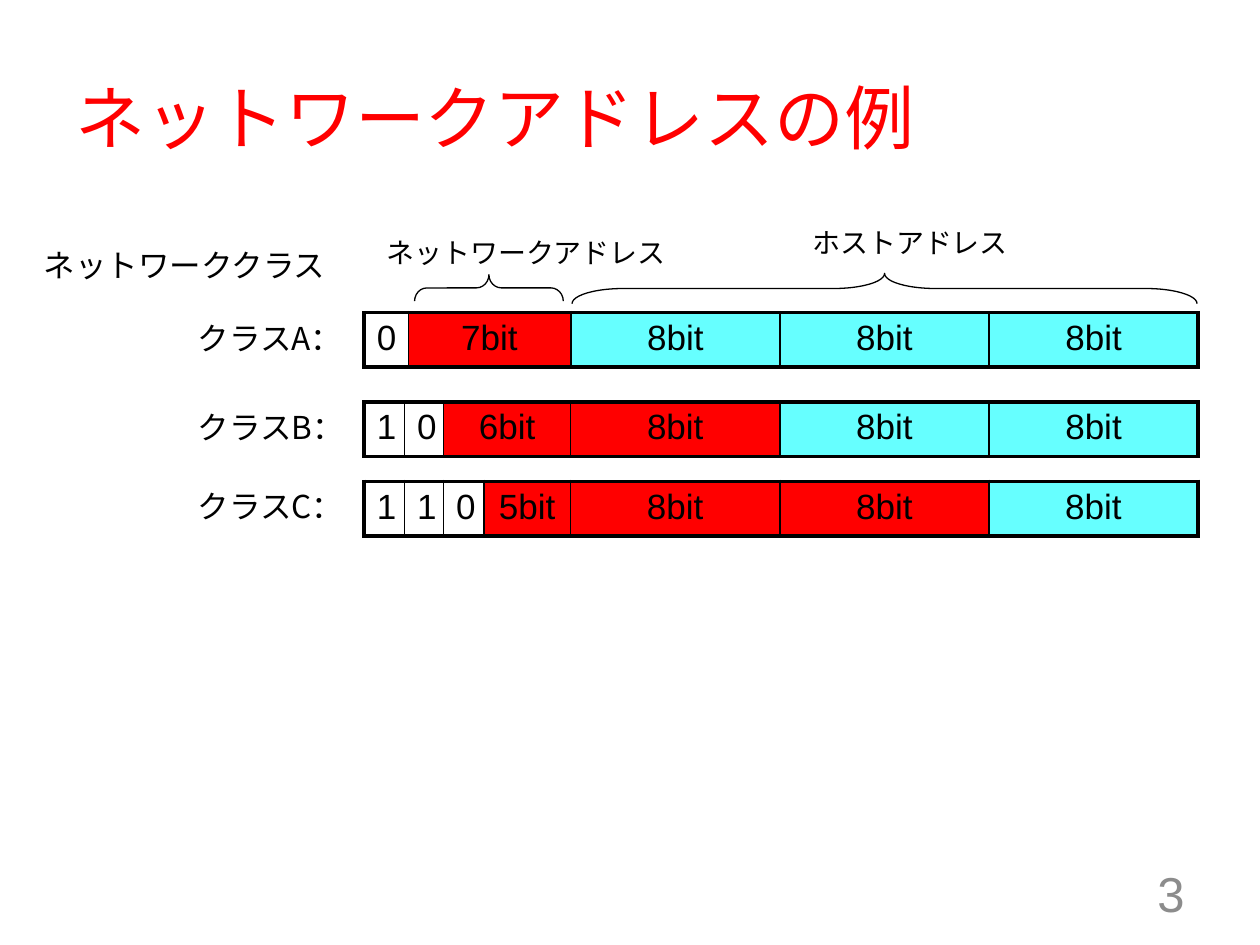
from typing import NamedTuple

from lxml.etree import SubElement as Sub
from pptx import Presentation
from pptx.dml.color import RGBColor
from pptx.enum.shapes import MSO_SHAPE as Shape
from pptx.enum.text import MSO_ANCHOR as Anchor, PP_ALIGN as Align
from pptx.oxml.ns import qn
from pptx.util import Inches, Pt

WIDE, HIGH = 10, 7.5
LEFT, OCTET, FIRST, DEEP = 2.89, 1.66, 1.64, 0.43
INK, RED, CYAN = "000000", "FF0000", "66FFFF"
GOTHIC, SANS = "Noto Sans CJK JP", "Arial"


class Label(NamedTuple):
    """Text with its place and look."""
    text: str
    box: tuple[float, float, float, float]
    size: float
    font: str = GOTHIC
    ink: str = INK
    wrap: bool = False
    anchor: Anchor = Anchor.TOP
    align: Align = Align.LEFT


class Band(NamedTuple):
    """Address layout of one class: its prefix bits, their widths and the row top."""
    name: str
    bits: str
    widths: list[float]
    nets: int
    top: float


class Brace(NamedTuple):
    """Span of a brace above the rows, with its curl."""
    left: float
    top: float
    width: float
    height: float
    curl: float


LABELS = [
    Label("ネットワークアドレスの例", (0.5, 0.3, 9, 1.25), 40, ink=RED, wrap=True,
          anchor=Anchor.MIDDLE),
    Label("ネットワーククラス", (0.25, 1.9, 2.47, 0.4), 18),
    Label("ネットワークアドレス", (2.97, 1.82, 2.45, 0.37), 16),
    Label("ホストアドレス", (6.35, 1.74, 1.77, 0.37), 16),
    Label("3", (7.17, 6.83, 2.33, 0.52), 28, SANS, "8C8C8C", True, Anchor.MIDDLE,
          Align.RIGHT),
]
BANDS = [
    Band("A", "0", [0.35], 0, 2.48),
    Band("B", "10", [0.32, 0.31], 1, 3.19),
    Band("C", "110", [0.32, 0.31, 0.32], 2, 3.82),
]
BRACES = [Brace(3.29, 2.18, 1.18, 0.21, 0.47), Brace(4.54, 2.17, 4.96, 0.24, 1.69)]


def tint(code: str) -> RGBColor:
    """Turn a hex string into a colour."""
    return RGBColor.from_string(code)


def style(para, size: float, font: str, ink: str, align: Align) -> None:
    """Format every run of a paragraph."""
    para.alignment = align
    for run in para.runs:
        run.font.size, run.font.name = Pt(size), font
        run.font.color.rgb = tint(ink)
        Sub(run.font._element, qn("a:ea"), typeface=font)


def write(slide, label: Label) -> None:
    """Place a label as a text box."""
    frame = slide.shapes.add_textbox(*map(Inches, label.box)).text_frame
    frame.text = label.text
    frame.word_wrap, frame.vertical_anchor = label.wrap, label.anchor
    style(frame.paragraphs[0], label.size, label.font, label.ink, label.align)


def edge(cell, side: str, width: float) -> None:
    """Draw one border of a cell."""
    line = Sub(cell._tc.get_or_add_tcPr(), qn(f"a:ln{side}"), w=str(Pt(width)))
    Sub(Sub(line, qn("a:solidFill")), qn("a:srgbClr"), val=INK)


def draw_band(slide, band: Band) -> None:
    """Draw the bit layout of one class, with its name."""
    write(slide, Label(f"クラス{band.name}：", (1.47, band.top, 1.38, 0.4), 18, wrap=True))
    head = len(band.bits)
    texts = [*band.bits, f"{8 - head}bit"] + ["8bit"] * 3
    fills = [None] * head + [RED] * (1 + band.nets) + [CYAN] * (3 - band.nets)
    widths = [*band.widths, FIRST - sum(band.widths)] + [OCTET] * 3
    table = slide.shapes.add_table(1, len(texts), Inches(LEFT), Inches(band.top),
                                   Inches(sum(widths)), Inches(DEEP)).table
    table.first_row = table.horz_banding = False
    last = len(texts) - 1
    for col, (text, fill, width) in enumerate(zip(texts, fills, widths)):
        table.columns[col].width = Inches(width)
        cell = table.cell(0, col)
        cell.text = text
        style(cell.text_frame.paragraphs[0], 20, SANS, INK, Align.CENTER)
        edge(cell, "L", 1 if col else 2.25)
        edge(cell, "R", 1 if col < last else 2.25)
        edge(cell, "T", 2.25)
        edge(cell, "B", 2.25)
        if fill:
            cell.fill.solid()
            cell.fill.fore_color.rgb = tint(fill)
        else:
            cell.fill.background()


def draw_brace(slide, brace: Brace) -> None:
    """Draw a left brace turned to point up over its span."""
    mid = brace.left + brace.width / 2, brace.top + brace.height / 2
    box = (mid[0] - brace.height / 2, mid[1] - brace.width / 2, brace.height, brace.width)
    shape = slide.shapes.add_shape(Shape.LEFT_BRACE, *map(Inches, box))
    shape.rotation = 90
    shape.adjustments[0], shape.adjustments[1] = brace.curl, 0.5
    shape.shadow.inherit = False
    shape.fill.background()
    shape.line.color.rgb = tint(INK)
    shape.line.width = Pt(0.75)


def main() -> None:
    """Build and save the slide."""
    deck = Presentation()
    deck.slide_width, deck.slide_height = Inches(WIDE), Inches(HIGH)
    slide = deck.slides.add_slide(deck.slide_layouts[6])
    for label in LABELS:
        write(slide, label)
    for band in BANDS:
        draw_band(slide, band)
    for brace in BRACES:
        draw_brace(slide, brace)
    deck.save("out.pptx")


if __name__ == "__main__":
    main()
